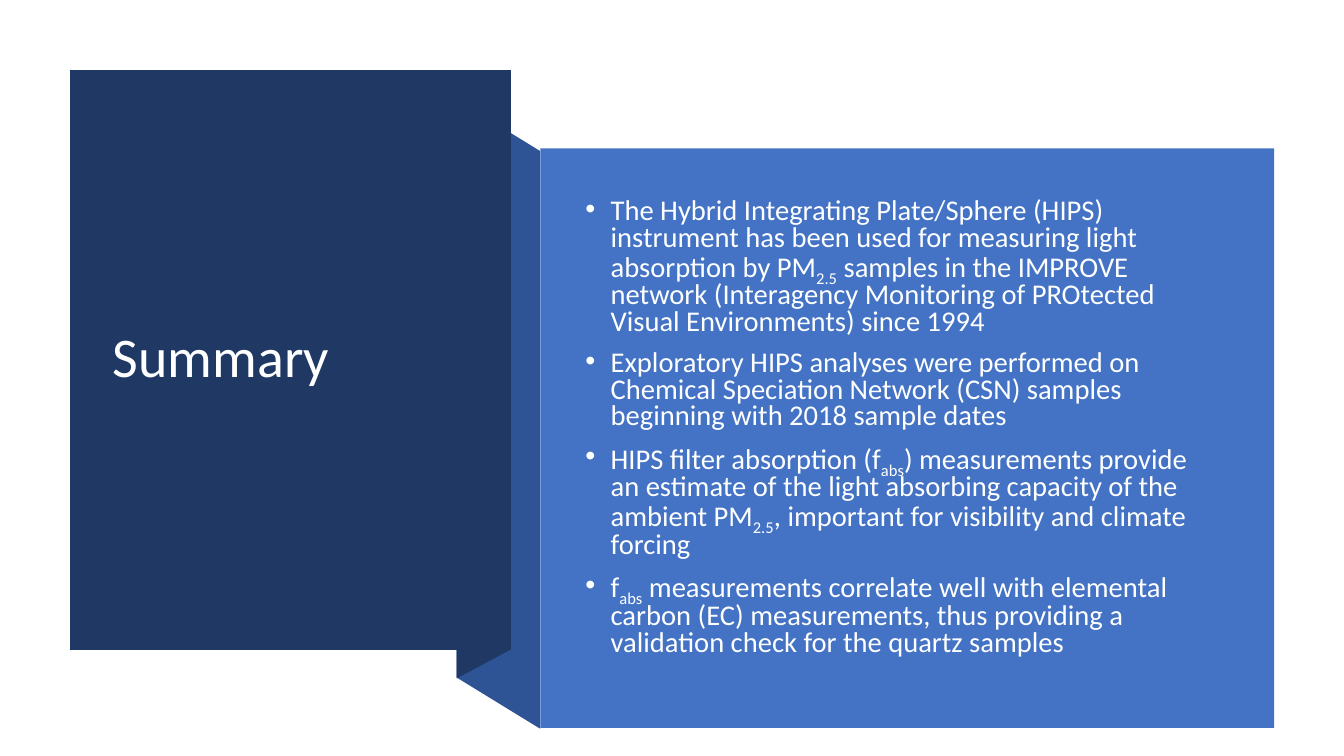
"""Build the summary slide with a folded ribbon and a bulleted panel."""
from lxml import etree
from pptx import Presentation
from pptx.dml.color import RGBColor
from pptx.enum.shapes import MSO_SHAPE
from pptx.enum.text import MSO_ANCHOR, PP_ALIGN
from pptx.oxml.ns import qn
from pptx.util import Pt

RECTANGLE = MSO_SHAPE.RECTANGLE
MIDDLE = MSO_ANCHOR.MIDDLE
LEFT = PP_ALIGN.LEFT

WHITE = RGBColor(0xFF, 0xFF, 0xFF)
BULLET_WHITE = RGBColor(0xFE, 0xFF, 0xFF)
NAVY = RGBColor(0x1F, 0x38, 0x64)
FOLD_BLUE = RGBColor(0x2F, 0x54, 0x96)
PANEL_BLUE = RGBColor(0x44, 0x72, 0xC4)
FONT = "Calibri"

TITLE = "Summary"
# Each bullet alternates between normal text and subscript.
BULLETS = [
    ("The Hybrid Integrating Plate/Sphere (HIPS) instrument has been used for "
     "measuring light absorption by PM", "2.5",
     " samples in the IMPROVE network (Interagency Monitoring of PROtected "
     "Visual Environments) since 1994"),
    ("Exploratory HIPS analyses were performed on Chemical Speciation Network "
     "(CSN) samples beginning with 2018 sample dates",),
    ("HIPS filter absorption (f", "abs",
     ") measurements provide an estimate of the light absorbing capacity of the "
     "ambient PM", "2.5", ", important for visibility and climate forcing"),
    ("f", "abs",
     " measurements correlate well with elemental carbon (EC) measurements, thus "
     "providing a validation check for the quartz samples"),
]

FOLD_LEFT, CARD_RIGHT, PANEL_LEFT = 326.2, 364.8, 385.9
RIBBON = [
    (FOLD_BLUE, [(PANEL_LEFT, 520.6), (FOLD_LEFT, 484),
                 (FOLD_LEFT, 71.3), (PANEL_LEFT, 108)]),
    (NAVY, [(CARD_RIGHT, 464), (FOLD_LEFT, 484.6),
            (FOLD_LEFT, 70.6), (CARD_RIGHT, 50)]),
    (NAVY, [(50, 50.2), (CARD_RIGHT, 50.2), (CARD_RIGHT, 464.2), (50, 464.2)]),
]
PANEL_BOX = (PANEL_LEFT, 106, 524.2, 414)
TITLE_BOX = (73.4, 77, 267, 359.3)
BULLET_BOX = (411.1, 135.4, 468.7, 341.3)
INDENT = 18


def paint(shape, color):
    shape.shadow.inherit = False
    shape.fill.solid()
    shape.fill.fore_color.rgb = color
    shape.line.fill.background()


def add_fold(slide, color, corners):
    points = [(Pt(x), Pt(y)) for x, y in corners]
    builder = slide.shapes.build_freeform(*points[0], scale=1.0)
    builder.add_line_segments(points[1:], close=True)
    paint(builder.convert_to_shape(), color)


def add_run(paragraph, text, size, color):
    run = paragraph.add_run()
    run.text = text
    for name, value in {"name": FONT, "size": Pt(size)}.items():
        setattr(run.font, name, value)
    run.font.color.rgb = color
    return run


def format_paragraph(paragraph, **values):
    for name, value in values.items():
        setattr(paragraph, name, value)


def add_bullet_mark(paragraph):
    properties = paragraph._p.get_or_add_pPr()
    properties.set("marL", str(Pt(INDENT)))
    properties.set("indent", str(-Pt(INDENT)))
    color = etree.SubElement(properties, qn("a:buClr"))
    etree.SubElement(color, qn("a:srgbClr"), val=str(BULLET_WHITE))
    etree.SubElement(properties, qn("a:buFont"), typeface="Arial")
    etree.SubElement(properties, qn("a:buChar"), char="•")


def add_title(slide):
    title = slide.shapes.title
    title.left, title.top, title.width, title.height = map(Pt, TITLE_BOX)
    title.text_frame.vertical_anchor = MIDDLE
    paragraph = title.text_frame.paragraphs[0]
    format_paragraph(paragraph, alignment=LEFT, line_spacing=0.9)
    add_run(paragraph, TITLE, 40, WHITE)
    title.element.getparent().append(title.element)


def add_bullets(slide):
    frame = slide.shapes.add_textbox(*map(Pt, BULLET_BOX)).text_frame
    frame.word_wrap = True
    frame.vertical_anchor = MIDDLE
    for index, parts in enumerate(BULLETS):
        paragraph = frame.add_paragraph() if index else frame.paragraphs[0]
        format_paragraph(paragraph, alignment=LEFT, line_spacing=0.78,
                         space_before=Pt(10 if index else 0))
        add_bullet_mark(paragraph)
        for position, text in enumerate(parts):
            run = add_run(paragraph, text, 20.4, BULLET_WHITE)
            if position % 2:
                run._r.get_or_add_rPr().set("baseline", "-25000")


def main():
    presentation = Presentation()
    presentation.slide_width, presentation.slide_height = Pt(960), Pt(540)
    slide = presentation.slides.add_slide(presentation.slide_layouts[5])
    for color, corners in RIBBON:
        add_fold(slide, color, corners)
    add_title(slide)
    paint(slide.shapes.add_shape(RECTANGLE, *map(Pt, PANEL_BOX)), PANEL_BLUE)
    add_bullets(slide)
    presentation.save("out.pptx")


if __name__ == "__main__":
    main()
